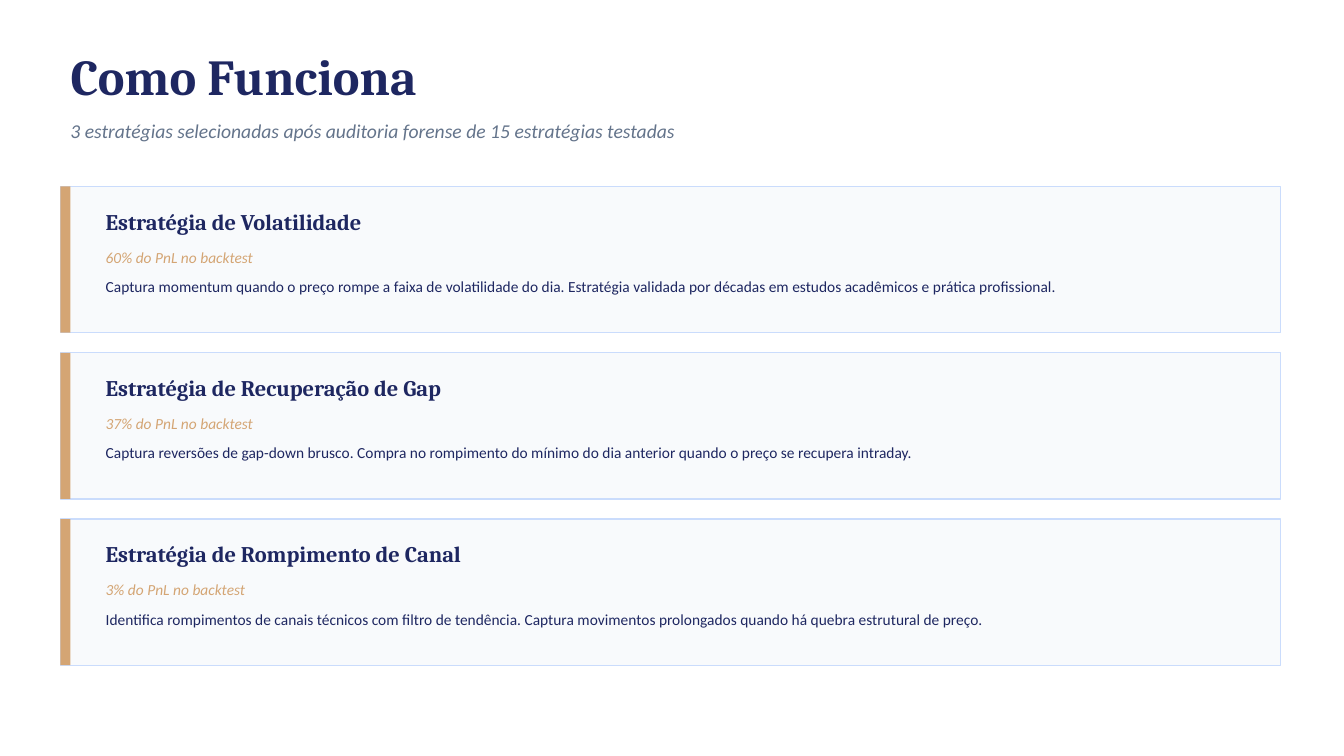
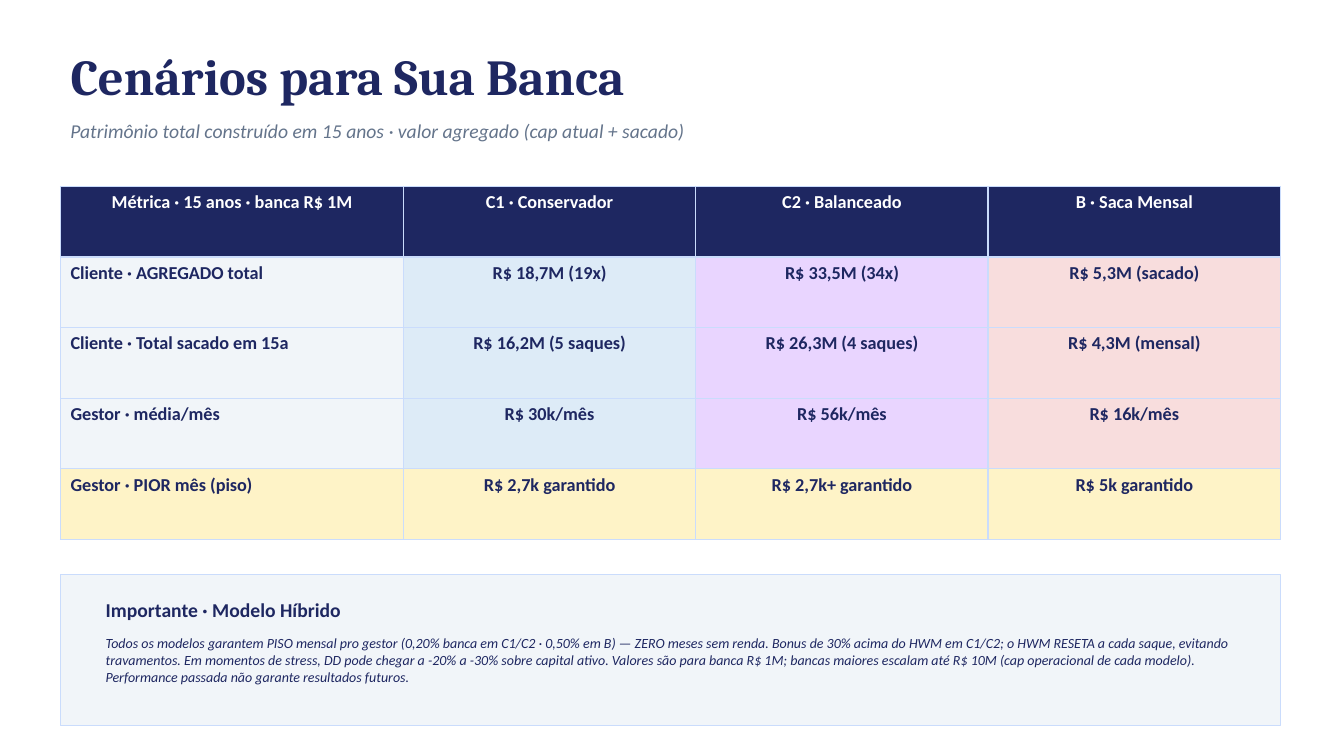
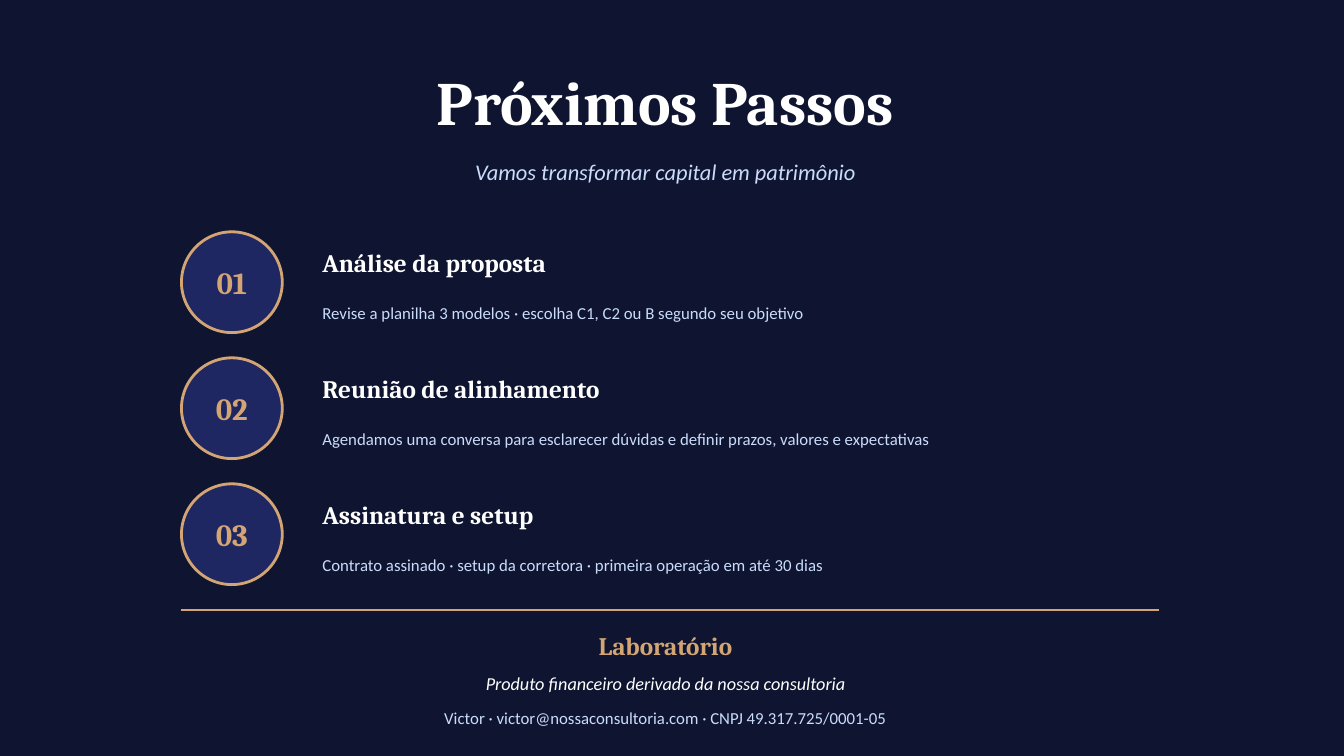
"""Build three slides on an investment product: strategies, scenarios and next steps."""
from dataclasses import dataclass

from lxml import etree
from pptx import Presentation
from pptx import util as u
from pptx.dml.color import RGBColor
from pptx.enum import shapes, text
from pptx.oxml.ns import qn

HUES = {
    "white": "FFFFFF", "night": "0F1530", "navy": "1E2761", "slate": "64748B",
    "gold": "D4A574", "ice": "CADCFC", "pale": "F8FAFC", "mist": "F1F5F9",
    "blue": "DDEBF7", "lilac": "E9D5FF", "rose": "F8DDDD", "cream": "FEF3C7",
}
SERIF, SANS = "Cambria", "Calibri"
MID, TOP = text.MSO_ANCHOR.MIDDLE, text.MSO_ANCHOR.TOP
LEFT, WIDE = 0.6, 12.1


@dataclass(frozen=True)
class Style:
    size: int
    hue: str
    font: str = SANS
    bold: bool = False
    slant: bool = False
    mid: bool = False


@dataclass(frozen=True)
class Box:
    left: float
    top: float
    width: float
    height: float

    def scale(self) -> list[int]:
        return [u.Inches(n) for n in (self.left, self.top, self.width, self.height)]


@dataclass(frozen=True)
class Card:
    name: str
    share: str
    about: str


@dataclass(frozen=True)
class Step:
    name: str
    about: str


TITLE = Style(36, "navy", SERIF, bold=True)
LEAD = Style(14, "slate", slant=True)
CLOSE = Style(44, "white", SERIF, bold=True, mid=True)
MOTTO = Style(16, "ice", slant=True, mid=True)
NAME = Style(16, "navy", SERIF, bold=True)
SHARE = Style(11, "gold", slant=True)
ABOUT = Style(11, "navy")
HEAD = Style(13, "white", bold=True, mid=True)
LABEL = Style(13, "navy", bold=True)
VALUE = Style(13, "navy", bold=True, mid=True)
ALERT = Style(14, "navy", bold=True)
NOTE = Style(10, "navy", slant=True)
COUNT = Style(22, "gold", SERIF, bold=True, mid=True)
STAGE = Style(18, "white", SERIF, bold=True)
HINT = Style(12, "ice")

CARDS = [
    Card("Estratégia de Volatilidade", "60% do PnL no backtest",
         "Captura momentum quando o preço rompe a faixa de volatilidade do dia. "
         "Estratégia validada por décadas em estudos acadêmicos e prática profissional."),
    Card("Estratégia de Recuperação de Gap", "37% do PnL no backtest",
         "Captura reversões de gap-down brusco. Compra no rompimento do mínimo "
         "do dia anterior quando o preço se recupera intraday."),
    Card("Estratégia de Rompimento de Canal", "3% do PnL no backtest",
         "Identifica rompimentos de canais técnicos com filtro de tendência. "
         "Captura movimentos prolongados quando há quebra estrutural de preço."),
]
ROWS = [
    ["Métrica · 15 anos · banca R$ 1M", "C1 · Conservador", "C2 · Balanceado", "B · Saca Mensal"],
    ["Cliente · AGREGADO total", "R$ 18,7M (19x)", "R$ 33,5M (34x)", "R$ 5,3M (sacado)"],
    ["Cliente · Total sacado em 15a", "R$ 16,2M (5 saques)", "R$ 26,3M (4 saques)",
     "R$ 4,3M (mensal)"],
    ["Gestor · média/mês", "R$ 30k/mês", "R$ 56k/mês", "R$ 16k/mês"],
    ["Gestor · PIOR mês (piso)", "R$ 2,7k garantido", "R$ 2,7k+ garantido", "R$ 5k garantido"],
]
TINTS = ["mist", "blue", "lilac", "rose"]
RISK = (
    "Todos os modelos garantem PISO mensal pro gestor (0,20% banca em C1/C2 · 0,50% em B) "
    "— ZERO meses sem renda. Bonus de 30% acima do HWM em C1/C2; o HWM RESETA a cada saque, "
    "evitando travamentos. Em momentos de stress, DD pode chegar a -20% a -30% sobre capital "
    "ativo. Valores são para banca R$ 1M; bancas maiores escalam até R$ 10M (cap operacional "
    "de cada modelo). Performance passada não garante resultados futuros."
)
STEPS = [
    Step("Análise da proposta",
         "Revise a planilha 3 modelos · escolha C1, C2 ou B segundo seu objetivo"),
    Step("Reunião de alinhamento",
         "Agendamos uma conversa para esclarecer dúvidas e definir prazos, valores e expectativas"),
    Step("Assinatura e setup",
         "Contrato assinado · setup da corretora · primeira operação em até 30 dias"),
]


def tone(hue: str) -> RGBColor:
    return RGBColor.from_string(HUES[hue])


def write(frame, words: str, style: Style) -> None:
    frame.text = words
    para = frame.paragraphs[0]
    para.alignment = text.PP_ALIGN.CENTER if style.mid else text.PP_ALIGN.LEFT
    font = para.runs[0].font
    font.name, font.size = style.font, u.Pt(style.size)
    font.bold, font.italic = style.bold, style.slant
    font.color.rgb = tone(style.hue)


def label(slide, box: Box, words: str, style: Style, anchor=MID) -> None:
    frame = slide.shapes.add_textbox(*box.scale()).text_frame
    frame.word_wrap = True
    frame.vertical_anchor = anchor
    write(frame, words, style)


def shape(slide, kind, box: Box, fill: str, edge: str = "", width: float = 1):
    item = slide.shapes.add_shape(kind, *box.scale())
    item.shadow.inherit = False
    item.fill.solid()
    item.fill.fore_color.rgb = tone(fill)
    if edge:
        item.line.color.rgb = tone(edge)
        item.line.width = u.Pt(width)
    else:
        item.line.fill.background()
    return item


def panel(slide, top: float, height: float, fill: str) -> None:
    shape(slide, shapes.MSO_SHAPE.RECTANGLE, Box(LEFT, top, WIDE, height), fill, "ice")


def start(deck, back: str, title: str, box: Box, style: Style):
    slide = deck.slides.add_slide(deck.slide_layouts[5])
    slide.background.fill.solid()
    slide.background.fill.fore_color.rgb = tone(back)
    head = slide.shapes.title
    head.left, head.top, head.width, head.height = box.scale()
    frame = head.text_frame
    frame.auto_size = text.MSO_AUTO_SIZE.NONE
    frame.vertical_anchor = MID
    write(frame, title, style)
    return slide


def page(deck, title: str, lead: str):
    slide = start(deck, "white", title, Box(LEFT, 0.4, 12, 0.7), TITLE)
    label(slide, Box(LEFT, 1.1, 12, 0.4), lead, LEAD)
    return slide


def border(cell, hue: str) -> None:
    props = cell._tc.get_or_add_tcPr()
    for spot, side in enumerate(("lnL", "lnR", "lnT", "lnB")):
        line = etree.Element(qn(f"a:{side}"), w=str(u.Pt(1)))
        fill = etree.SubElement(line, qn("a:solidFill"))
        etree.SubElement(fill, qn("a:srgbClr"), val=HUES[hue])
        props.insert(spot, line)


def grid(slide, box: Box, first: float) -> None:
    table = slide.shapes.add_table(len(ROWS), len(ROWS[0]), *box.scale()).table
    rest = (box.width - first) / (len(ROWS[0]) - 1)
    for col, column in enumerate(table.columns):
        column.width = u.Inches(rest if col else first)
    for row, words in enumerate(ROWS):
        for col, word in enumerate(words):
            cell = table.cell(row, col)
            if row == 0:
                fill, style = "navy", HEAD
            else:
                fill = "cream" if row == len(ROWS) - 1 else TINTS[col]
                style = VALUE if col else LABEL
            cell.fill.solid()
            cell.fill.fore_color.rgb = tone(fill)
            border(cell, "ice")
            write(cell.text_frame, word, style)


def works(deck) -> None:
    slide = page(deck, "Como Funciona",
                 "3 estratégias selecionadas após auditoria forense de 15 estratégias testadas")
    height, gap = 1.45, 0.2
    for row, card in enumerate(CARDS):
        top = 1.85 + row * (height + gap)
        panel(slide, top, height, "pale")
        shape(slide, shapes.MSO_SHAPE.RECTANGLE, Box(LEFT, top, 0.1, height), "gold")
        label(slide, Box(0.95, top + 0.12, 11.5, 0.45), card.name, NAME)
        label(slide, Box(0.95, top + 0.55, 11.5, 0.3), card.share, SHARE)
        label(slide, Box(0.95, top + 0.85, 11.5, 0.55), card.about, ABOUT, TOP)


def cases(deck) -> None:
    slide = page(deck, "Cenários para Sua Banca",
                 "Patrimônio total construído em 15 anos · valor agregado (cap atual + sacado)")
    grid(slide, Box(LEFT, 1.85, WIDE, 3.5), 3.4)
    panel(slide, 5.7, 1.5, "mist")
    label(slide, Box(0.95, 5.85, 11, 0.4), "Importante · Modelo Híbrido", ALERT)
    label(slide, Box(0.95, 6.25, 11.4, 0.9), RISK, NOTE, TOP)


def plan(deck) -> None:
    slide = start(deck, "night", "Próximos Passos", Box(LEFT, 0.6, 12, 0.8), CLOSE)
    label(slide, Box(LEFT, 1.5, 12, 0.4), "Vamos transformar capital em patrimônio", MOTTO)
    for row, step in enumerate(STEPS):
        top = 2.3 + row * 1.25
        disc = shape(slide, shapes.MSO_SHAPE.OVAL, Box(1.8, top, 1, 1), "navy", "gold", 2)
        disc.text_frame.vertical_anchor = MID
        write(disc.text_frame, f"{row + 1:02}", COUNT)
        label(slide, Box(3.1, top + 0.08, 8.5, 0.45), step.name, STAGE)
        label(slide, Box(3.1, top + 0.55, 9, 0.5), step.about, HINT)

    ends = [u.Inches(n) for n in (1.8, 6.05, 11.5, 6.05)]
    rule = slide.shapes.add_connector(shapes.MSO_CONNECTOR.STRAIGHT, *ends)
    rule.line.color.rgb = tone("gold")
    rule.line.width = u.Pt(1)
    etree.SubElement(rule._element.spPr, qn("a:effectLst"))

    label(slide, Box(LEFT, 6.2, 12, 0.4), "Laboratório",
          Style(18, "gold", SERIF, bold=True, mid=True))
    label(slide, Box(LEFT, 6.6, 12, 0.35), "Produto financeiro derivado da nossa consultoria",
          Style(13, "white", slant=True, mid=True))
    label(slide, Box(LEFT, 6.95, 12, 0.35),
          "Victor · victor@nossaconsultoria.com · CNPJ 49.317.725/0001-05",
          Style(12, "ice", mid=True))


def main() -> None:
    deck = Presentation()
    deck.slide_width, deck.slide_height = u.Inches(13.33), u.Inches(7.5)
    for build in (works, cases, plan):
        build(deck)
    deck.save("out.pptx")


if __name__ == "__main__":
    main()
